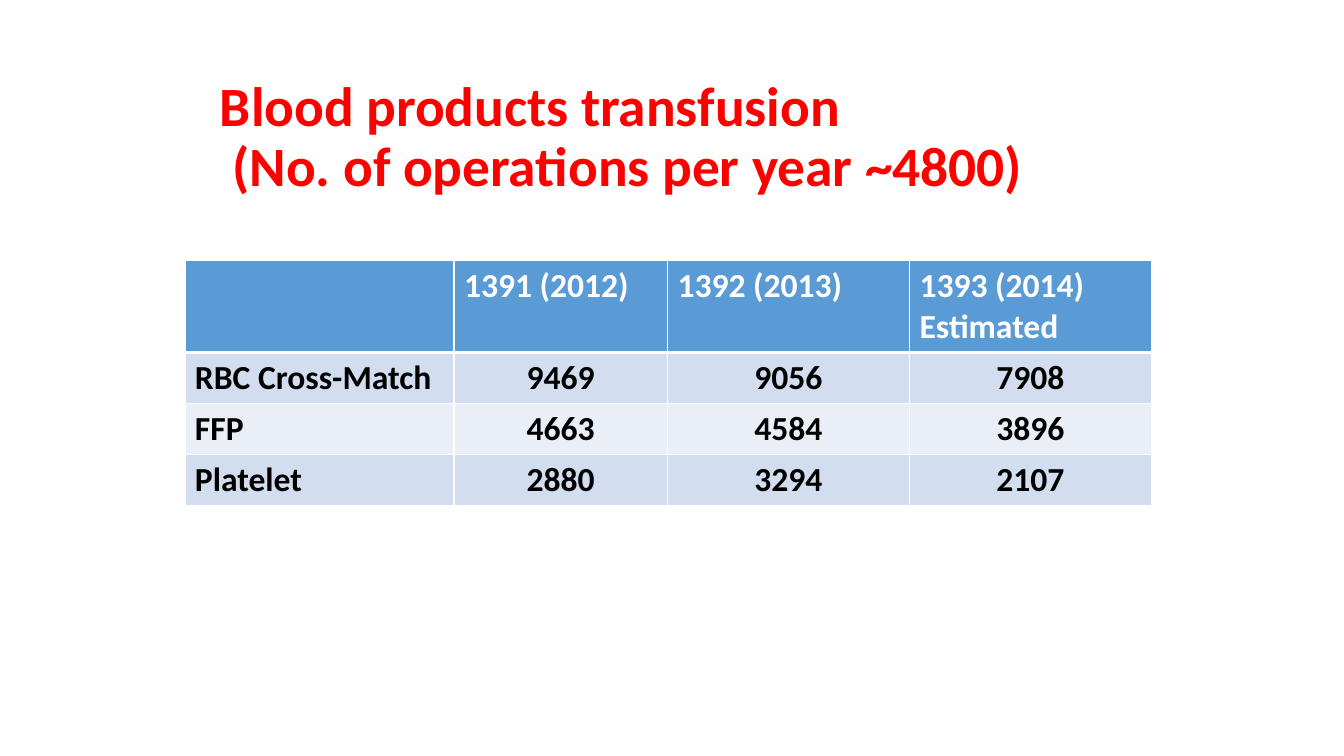
from dataclasses import dataclass

from lxml.etree import SubElement
from pptx import Presentation
from pptx.dml.color import RGBColor
from pptx.enum.text import MSO_ANCHOR, MSO_AUTO_SIZE, PP_ALIGN
from pptx.oxml.ns import qn
from pptx.util import Cm, Pt

COLOURS = {
    "title": "FF0000",
    "header": "5B9BD5",
    "odd_row": "D2DEEF",
    "even_row": "EAEFF7",
    "border": "FFFFFF",
    "header_text": "FFFFFF",
    "body_text": "000000",
}
FONT = {"name": "Calibri", "bold": True}
COLUMN_WIDTHS = (6.78, 5.38, 6.1, 6.1)
HEADER_HEIGHT, ROW_HEIGHT = 2.31, 1.29
HEADINGS = ("", "1391 (2012)", "1392 (2013)", "1393 (2014)\nEstimated")


@dataclass
class Product:
    name: str
    units: tuple[int, ...]


PRODUCTS = (
    Product("RBC Cross-Match", (9469, 9056, 7908)),
    Product("FFP", (4663, 4584, 3896)),
    Product("Platelet", (2880, 3294, 2107)),
)


def format_font(font, size: float, colour: str) -> None:
    for attribute, value in {**FONT, "size": Pt(size)}.items():
        setattr(font, attribute, value)
    font.color.rgb = RGBColor.from_string(COLOURS[colour])


def add_title(slide) -> None:
    title = slide.shapes.title
    placement = {"left": 5.29, "top": 1.9, "width": 22.86, "height": 3.18}
    for attribute, value in placement.items():
        setattr(title, attribute, Cm(value))
    frame = title.text_frame
    frame.text = "Blood products transfusion\v (No. of operations per year ~4800)"
    frame_format = {
        "word_wrap": True,
        "auto_size": MSO_AUTO_SIZE.NONE,
        "vertical_anchor": MSO_ANCHOR.MIDDLE,
    }
    for attribute, value in frame_format.items():
        setattr(frame, attribute, value)
    paragraph = frame.paragraphs[0]
    paragraph.alignment = PP_ALIGN.LEFT
    paragraph.line_spacing = 0.9
    format_font(paragraph.font, 39.6, "title")


def add_borders(cell, bottom_width: float) -> None:
    """Draw the four cell borders; they must precede the fill in the XML."""
    properties = cell._tc.get_or_add_tcPr()
    widths = {"a:lnL": 1, "a:lnR": 1, "a:lnT": 1, "a:lnB": bottom_width}
    for tag, width in widths.items():
        line = SubElement(properties, qn(tag), w=str(Pt(width)))
        fill = SubElement(line, qn("a:solidFill"))
        SubElement(fill, qn("a:srgbClr"), val=COLOURS["border"])


def fill_cell(cell, text: str, fill: str, text_colour: str,
              alignment: PP_ALIGN, bottom_width: float = 1) -> None:
    add_borders(cell, bottom_width)
    cell.fill.solid()
    cell.fill.fore_color.rgb = RGBColor.from_string(COLOURS[fill])
    cell.text = text
    for paragraph in cell.text_frame.paragraphs:
        paragraph.alignment = alignment
        format_font(paragraph.font, 24, text_colour)


def add_product_table(slide) -> None:
    heights = (HEADER_HEIGHT,) + (ROW_HEIGHT,) * len(PRODUCTS)
    table = slide.shapes.add_table(
        len(heights), len(HEADINGS), Cm(4.66), Cm(6.56),
        Cm(sum(COLUMN_WIDTHS)), Cm(sum(heights)),
    ).table
    for column, width in zip(table.columns, COLUMN_WIDTHS):
        column.width = Cm(width)
    for row, height in zip(table.rows, heights):
        row.height = Cm(height)

    for column, heading in enumerate(HEADINGS):
        fill_cell(table.cell(0, column), heading, "header", "header_text",
                  PP_ALIGN.LEFT, bottom_width=3)
    for row, product in enumerate(PRODUCTS, start=1):
        fill = "odd_row" if row % 2 else "even_row"
        fill_cell(table.cell(row, 0), product.name, fill, "body_text", PP_ALIGN.LEFT)
        for column, units in enumerate(product.units, start=1):
            fill_cell(table.cell(row, column), str(units), fill, "body_text",
                      PP_ALIGN.CENTER)


def main() -> None:
    presentation = Presentation()
    presentation.slide_width = Cm(33.87)
    presentation.slide_height = Cm(19.05)
    title_only = presentation.slide_layouts.get_by_name("Title Only")
    slide = presentation.slides.add_slide(title_only)
    add_title(slide)
    add_product_table(slide)
    presentation.save("out.pptx")


if __name__ == "__main__":
    main()
